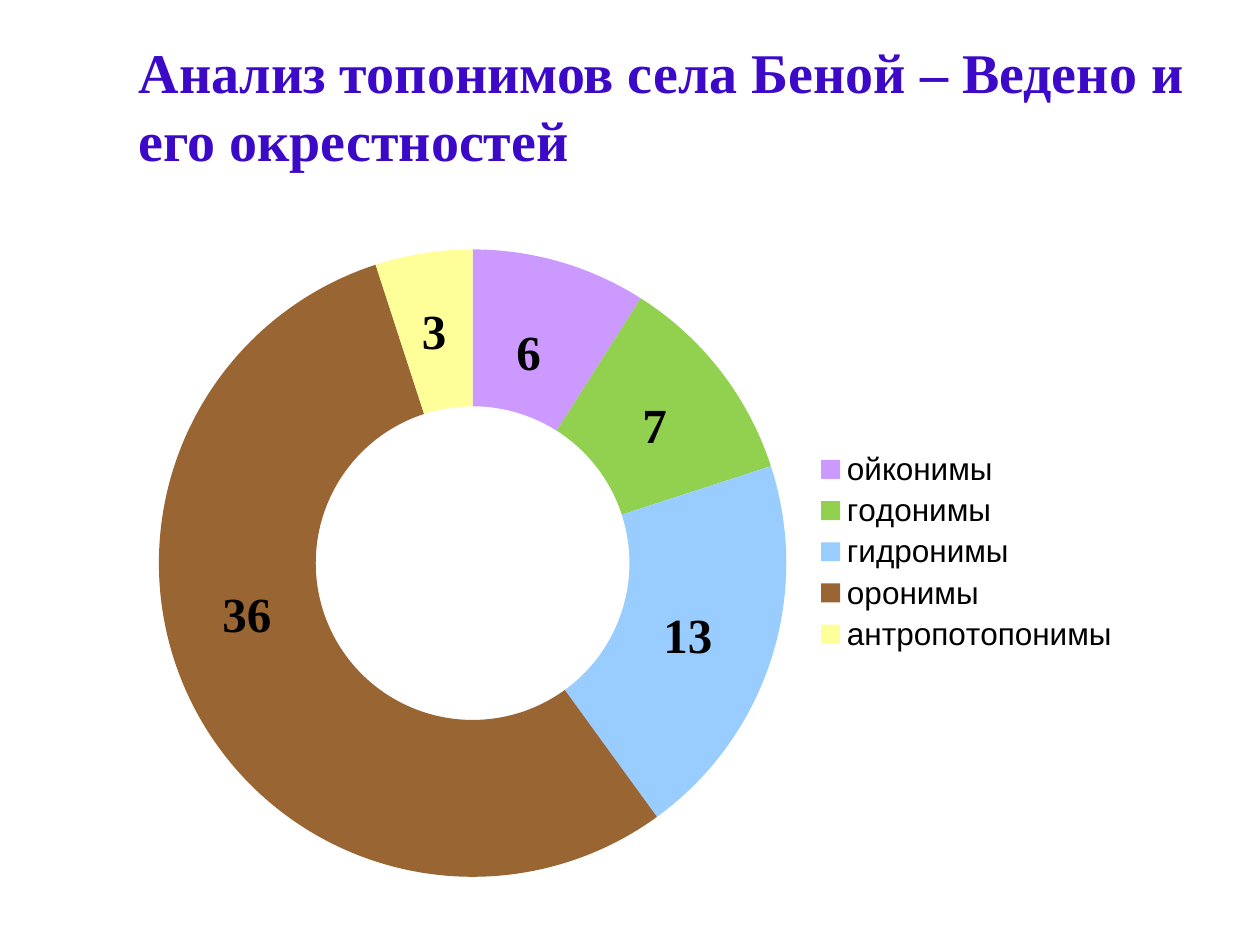
from pptx import Presentation
from pptx.chart.data import CategoryChartData
from pptx.dml.color import RGBColor
from pptx.enum.chart import XL_CHART_TYPE, XL_LEGEND_POSITION
from pptx.enum.text import MSO_ANCHOR, MSO_AUTO_SIZE, PP_ALIGN
from pptx.oxml import parse_xml
from pptx.oxml.ns import nsdecls, qn
from pptx.util import Pt

RING = XL_CHART_TYPE.DOUGHNUT
RIGHT = XL_LEGEND_POSITION.RIGHT
TOP = MSO_ANCHOR.TOP
GROW = MSO_AUTO_SIZE.SHAPE_TO_FIT_TEXT
FIXED = MSO_AUTO_SIZE.NONE
LEFT = PP_ALIGN.LEFT

# Kind of place name, share in percent, colour
KINDS = [
    ("ойконимы", 9, "CC99FF"),
    ("годонимы", 11, "92D050"),
    ("гидронимы", 20, "99CCFF"),
    ("оронимы", 55, "996633"),
    ("антропотопонимы", 5, "FFFF99"),
]

# Count on each ring slice: text, left, top, width
COUNTS = [
    ("6", 288, 180, 29),
    ("7", 360, 222, 29),
    ("13", 372, 342, 42.5),
    ("36", 120, 330, 42.5),
    ("3", 234, 168, 29),
]


def color(code):
    return RGBColor.from_string(code)


def place(node, index, box, target=""):
    """Give a chart node a manual layout, in fractions of the chart."""
    for old in node.findall(qn("c:layout")):
        node.remove(old)
    sizes = "".join(f'<c:{tag} val="{val}"/>' for tag, val in zip("xywh", box))
    node.insert(index, parse_xml(
        f'<c:layout {nsdecls("c")}><c:manualLayout>{target}'
        f'<c:xMode val="edge"/><c:yMode val="edge"/>{sizes}'
        f'</c:manualLayout></c:layout>'))


class Deck:
    serif = "Times New Roman"
    sans = "Arial"
    ink = "000000"
    accent = "3B09C7"

    def __init__(self, slide):
        self.slide = slide

    def style(self, font, name, size, code, bold=False):
        font.name, font.size, font.bold = name, Pt(size), bold
        font.color.rgb = color(code)

    def title(self, text, *box):
        shape = self.slide.shapes.title
        shape.left, shape.top, shape.width, shape.height = map(Pt, box)
        frame = shape.text_frame
        frame.text = text
        frame.word_wrap = True
        frame.auto_size = FIXED
        frame.vertical_anchor = TOP
        par = frame.paragraphs[0]
        par.alignment = LEFT
        self.style(par.font, self.serif, 32, self.accent, True)

    def ring(self, kinds, *box):
        data = CategoryChartData()
        data.categories = [name for name, _, _ in kinds]
        data.add_series("Series 1", [share for _, share, _ in kinds])
        chart = self.slide.shapes.add_chart(RING, *map(Pt, box), data).chart
        chart.has_title = False
        self.style(chart.font, self.sans, 18, self.ink)

        # Ring slices
        plot = chart.plots[0]
        plot.vary_by_categories = True
        for i, (_, _, code) in enumerate(kinds):
            slice_format = plot.series[0].points[i].format
            slice_format.fill.solid()
            slice_format.fill.fore_color.rgb = color(code)
            slice_format.line.fill.background()

        # Legend
        chart.has_legend = True
        legend = chart.legend
        legend.position = RIGHT
        legend.include_in_layout = False
        self.style(legend.font, self.sans, 18, self.ink)

        # Plot and legend places
        root = chart.element
        area = root.find(".//" + qn("c:plotArea"))
        key = root.find(".//" + qn("c:legend"))
        place(area, 0, (0.02, 0.08, 0.62, 0.83),
              '<c:layoutTarget val="inner"/>')
        place(key, 1, (0.65, 0.34, 0.33, 0.28))
        area.find(".//" + qn("c:holeSize")).set("val", "50")

    def count(self, text, left, top, wide):
        shape = self.slide.shapes.add_textbox(Pt(left), Pt(top), Pt(wide), Pt(41))
        frame = shape.text_frame
        frame.word_wrap = False
        frame.auto_size = GROW
        frame.text = text
        self.style(frame.paragraphs[0].font, self.serif, 28, self.ink, True)


def main():
    prs = Presentation()
    prs.slide_width, prs.slide_height = Pt(720), Pt(540)
    deck = Deck(prs.slides.add_slide(prs.slide_layouts[5]))

    deck.title("Анализ топонимов села Беной – Ведено и его окрестностей",
               72, 18, 624, 85)
    deck.ring(KINDS, 78, 108, 582, 432)
    for item in COUNTS:
        deck.count(*item)

    prs.save("out.pptx")


if __name__ == "__main__":
    main()
